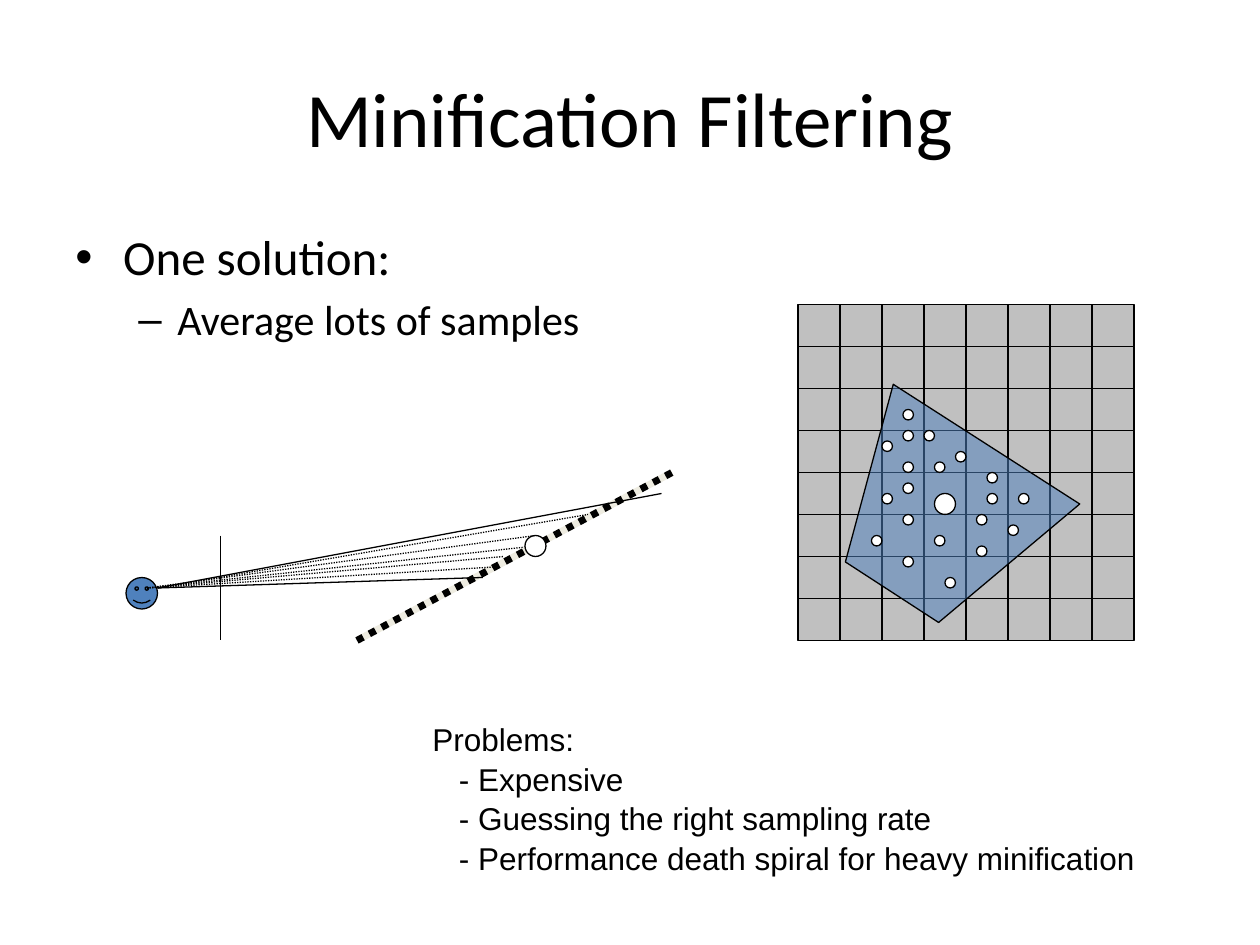
import collections

import pptx
import pptx.dml.color
import pptx.enum.dml
import pptx.enum.shapes
import pptx.enum.text
import pptx.oxml
import pptx.oxml.ns
import pptx.util

SHAPES = pptx.enum.shapes.MSO_SHAPE
DOTTED = pptx.enum.dml.MSO_LINE.ROUND_DOT
BLACK = pptx.dml.color.RGBColor(0x00, 0x00, 0x00)
WHITE = pptx.dml.color.RGBColor(0xFF, 0xFF, 0xFF)
GRAY = pptx.dml.color.RGBColor(0xC0, 0xC0, 0xC0)
BLUE = pptx.dml.color.RGBColor(0x4F, 0x81, 0xBD)
IVORY = pptx.dml.color.RGBColor(0xEE, 0xEC, 0xE1)

COLUMNS, ROWS = 120, 90
UNIT = pptx.util.Inches(10) // COLUMNS
TEXELS = 8

Box = collections.namedtuple("Box", "left top width height")

FOOTPRINT = [(9.08, 7.6), (4.52, 24.52), (13.4, 30.28), (26.84, 19)]
SAMPLES = [
    (10, 10), (12, 12), (10, 12), (8, 13), (10, 15), (15, 14), (18, 16),
    (13, 15), (10, 20), (10, 17), (8, 18), (7, 22), (13, 22), (17, 20),
    (18, 18), (20, 21), (17, 23), (14, 26), (10, 24), (21, 18),
]
PROBLEMS = [
    "- Expensive",
    "- Guessing the right sampling rate",
    "- Performance death spiral for heavy minification",
]


def grid(*values):
    """Convert grid columns or rows to slide lengths."""
    return [round(value * UNIT) for value in values]


def style_shape(shape, fill):
    """Give a shape a plain fill and a thin black outline."""
    shape.shadow.inherit = False
    shape.fill.solid()
    shape.fill.fore_color.rgb = fill
    shape.line.color.rgb = BLACK
    shape.line.width = pptx.util.Pt(0.75)


def add_figure(slide, box, kind, place, fill):
    """Add a preset shape at a left, top and size within the box."""
    left, top, size = place
    shape = slide.shapes.add_shape(
        kind, *grid(box.left + left, box.top + top, size, size))
    style_shape(shape, fill)
    return shape


def add_line(slide, box, start, end, color=BLACK, width=0.75, dash=None):
    """Draw a straight line between two points of the box."""
    ends = grid(box.left + start[0], box.top + start[1],
                box.left + end[0], box.top + end[1])
    line = slide.shapes.add_connector(
        pptx.enum.shapes.MSO_CONNECTOR.STRAIGHT, *ends)
    line.line.color.rgb = color
    line.line.width = pptx.util.Pt(width)
    if dash:
        line.line.dash_style = dash
    properties = line._element.spPr
    properties.append(pptx.oxml.parse_xml(
        "<a:effectLst %s/>" % pptx.oxml.ns.nsdecls("a")))


def add_text_frame(slide, box):
    """Add a wrapping text box that fills the box."""
    frame = slide.shapes.add_textbox(*grid(*box)).text_frame
    frame.word_wrap = True
    return frame


def fill_paragraph(paragraph, text, font, size, before=0, margin=0,
                   indent=0, bullet=None):
    """Write one paragraph with its indents, bullet and font."""
    paragraph.text = text
    paragraph.space_before = pptx.util.Pt(before)
    properties = paragraph._p.get_or_add_pPr()
    properties.set("marL", str(pptx.util.Inches(margin)))
    properties.set("indent", str(pptx.util.Inches(indent)))
    if bullet:
        properties.append(pptx.oxml.parse_xml(
            '<a:buFont %s typeface="Arial"/>' % pptx.oxml.ns.nsdecls("a")))
        properties.append(pptx.oxml.parse_xml(
            '<a:buChar %s char="%s"/>' % (pptx.oxml.ns.nsdecls("a"), bullet)))
    paragraph.font.name = font
    paragraph.font.size = pptx.util.Pt(size)
    paragraph.font.color.rgb = BLACK


def add_title(slide, box):
    """Place the centred slide title."""
    frame = add_text_frame(slide, box)
    frame.vertical_anchor = pptx.enum.text.MSO_ANCHOR.MIDDLE
    paragraph = frame.paragraphs[0]
    fill_paragraph(paragraph, "Minification Filtering", "Calibri", 44)
    paragraph.alignment = pptx.enum.text.PP_ALIGN.CENTER


def add_solution(slide, box):
    """Place the two bulleted levels of the solution."""
    frame = add_text_frame(slide, box)
    fill_paragraph(frame.paragraphs[0], "One solution:", "Calibri", 28,
                   5.6, 0.38, -0.38, "•")
    detail = frame.add_paragraph()
    detail.level = 1
    fill_paragraph(detail, "Average lots of samples", "Calibri", 24,
                   4.8, 0.81, -0.31, "–")


def add_problems(slide, box):
    """Place the list of problems under its heading."""
    frame = add_text_frame(slide, box)
    fill_paragraph(frame.paragraphs[0], "Problems:", "Arial", 18)
    for problem in PROBLEMS:
        fill_paragraph(frame.add_paragraph(), problem, "Arial", 18,
                       before=1, margin=0.21)


def add_view(slide, box):
    """Draw the eye, the screen, the slanted surface and the rays."""
    pupil, eye_edge = (2, 11), (3, 11)
    surface = (22, box.height), (box.width, 0)
    add_line(slide, box, pupil, (39, 7), dash=DOTTED)
    add_line(slide, box, *surface, color=IVORY, width=4)
    eye = add_figure(slide, box, SHAPES.SMILEY_FACE, (0, 10, 3), BLUE)
    eye.adjustments[0] = 0.05
    add_line(slide, box, (9, 6), (9, box.height))
    add_line(slide, box, *surface, width=4, dash=DOTTED)
    for end in [(51, 2), (34, 10)]:
        add_line(slide, box, eye_edge, end)
    add_figure(slide, box, SHAPES.OVAL, (38, 6, 2), WHITE)
    add_line(slide, box, eye_edge, (44, 4), dash=DOTTED)
    for end in [(39, 6), (36, 8), (35, 9)]:
        add_line(slide, box, pupil, end, dash=DOTTED)


def add_texture(slide, box):
    """Draw the texel grid, the pixel footprint and its samples."""
    texel = box.width / TEXELS
    for row in range(TEXELS):
        for column in range(TEXELS):
            add_figure(slide, box, SHAPES.RECTANGLE,
                       (column * texel, row * texel, texel), GRAY)
    corners = [grid(box.left + x, box.top + y) for x, y in FOOTPRINT]
    builder = slide.shapes.build_freeform(*corners[0])
    builder.add_line_segments(corners[1:], close=True)
    footprint = builder.convert_to_shape()
    style_shape(footprint, BLUE)
    color = footprint._element.spPr.find(
        pptx.oxml.ns.qn("a:solidFill"))[0]
    color.append(pptx.oxml.parse_xml(
        '<a:alpha %s val="53000"/>' % pptx.oxml.ns.nsdecls("a")))
    add_figure(slide, box, SHAPES.OVAL, (13, 18, 2), WHITE)
    for left, top in SAMPLES:
        add_figure(slide, box, SHAPES.OVAL, (left, top, 1), WHITE)


def main():
    """Build the slide and save it."""
    presentation = pptx.Presentation()
    presentation.slide_width, presentation.slide_height = grid(COLUMNS, ROWS)
    slide = presentation.slides.add_slide(presentation.slide_layouts[6])
    add_title(slide, Box(6, 3.6, 108, 15))
    add_solution(slide, Box(6, 21, 53, 59.4))
    add_texture(slide, Box(76, 29, 32, 32))
    add_view(slide, Box(12, 45, 52, 16))
    add_problems(slide, Box(40, 68, 76, 15.6))
    presentation.save("out.pptx")


if __name__ == "__main__":
    main()
